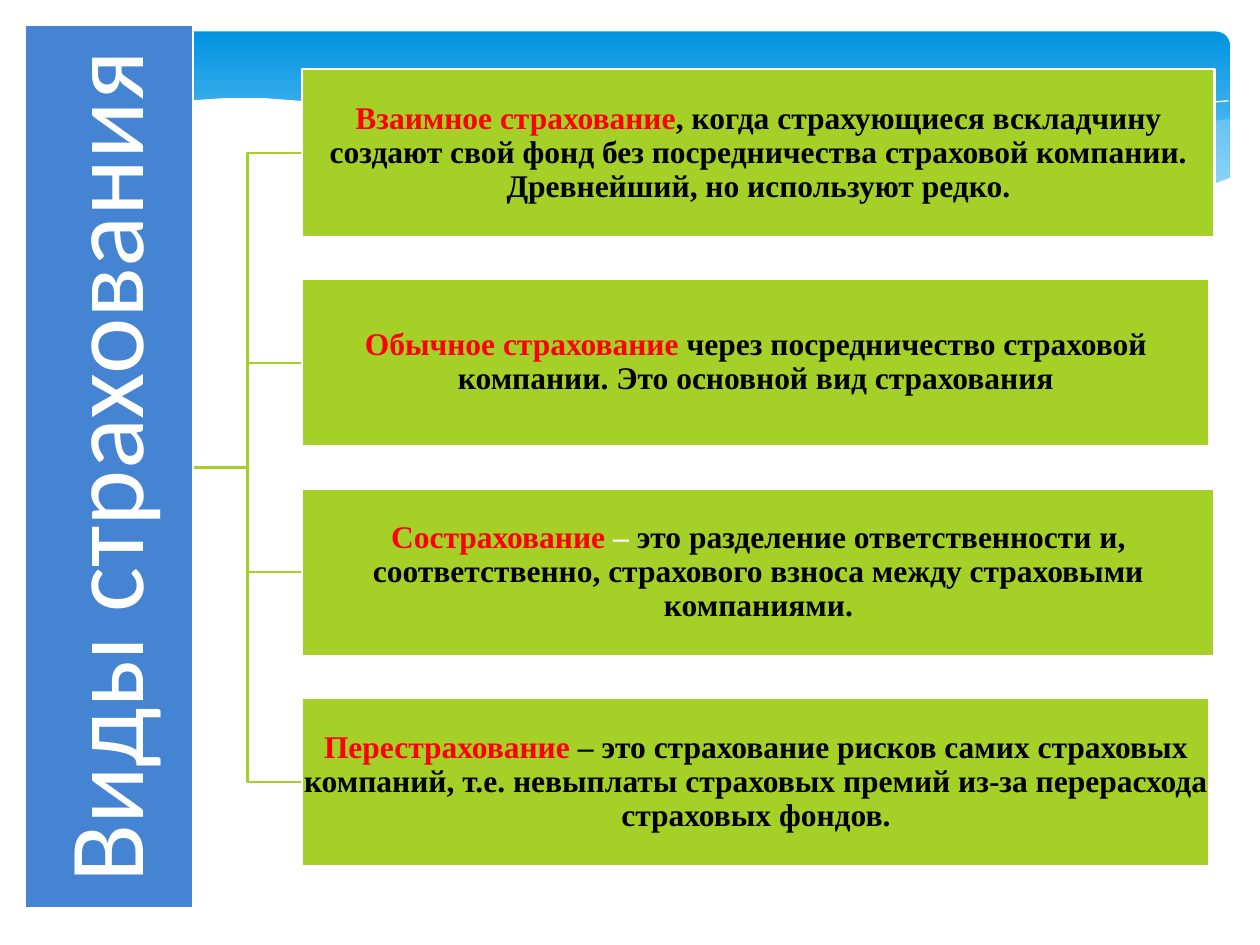
from lxml import etree
from pptx import Presentation
from pptx.dml.color import RGBColor
from pptx.enum.shapes import MSO_CONNECTOR, MSO_SHAPE
from pptx.enum.text import MSO_ANCHOR, PP_ALIGN
from pptx.oxml.ns import qn
from pptx.util import Inches, Pt

RECT = MSO_SHAPE.RECTANGLE
ROUND = MSO_SHAPE.ROUNDED_RECTANGLE
ELBOW = MSO_CONNECTOR.ELBOW
MIDDLE = MSO_ANCHOR.MIDDLE
CENTER = PP_ALIGN.CENTER

COLORS = {
    "sky": "0293E0", "pale": "83D3FE", "mist": "C6E7FC", "white": "FFFFFF",
    "blue": "4584D3", "green": "A5D028", "red": "FF0000", "black": "000000",
}
TITLE = "Виды страхования"
KINDS = [
    (7.24, [("Взаимное страхование", "red"),
            (", когда страхующиеся вскладчину создают свой фонд без посредничества "
             "страховой компании. Древнейший, но используют редко.", "black")]),
    (7.2, [("Обычное страхование ", "red"),
           ("через посредничество страховой компании. "
            "Это основной вид страхования", "black")]),
    (7.24, [("Сострахование ", "red"), ("– ", "white"),
            ("это разделение ответственности и, соответственно, страхового взноса "
             "между страховыми компаниями.", "black")]),
    (7.2, [("Перестрахование", "red"),
           (" – это страхование рисков самих страховых компаний, т.е. невыплаты "
            "страховых премий из-за перерасхода страховых фондов.", "black")]),
]
LEFT, TOP, STEP, HIGH = 2.4, 0.55, 1.664, 1.33
HUB = (1.53, 3.71)

MIST = [(9.76, 0.94), (9.35, 1.01), (8.91, 1.1), (8.32, 1.25), (7.53, 1.43),
        (6.61, 1.6), (7.05, 1.65), (7.57, 1.7), (8.14, 1.72), (8.63, 1.7),
        (9.05, 1.63), (9.42, 1.54), (9.76, 1.41)]
CREST = [(6.13, 1.51), (6.53, 1.41), (6.95, 1.3), (7.48, 1.17), (8.06, 1.04),
         (8.66, 0.93), (9.1, 0.86), (9.51, 0.82), (9.75, 0.8)]
WAVE = [(9.77, 1.41), (9.5, 1.51), (9.2, 1.59), (8.87, 1.66), (8.5, 1.7),
        (8.09, 1.71), (7.61, 1.7), (7.08, 1.65), (6.48, 1.56), (5.79, 1.44),
        (5.03, 1.28), (4.47, 1.14), (3.91, 1.02), (3.4, 0.92), (2.92, 0.85),
        (2.5, 0.81), (2.11, 0.78), (1.77, 0.78), (1.32, 0.81), (0.95, 0.85),
        (0.67, 0.91), (0.46, 0.98), (0.23, 1.07), (0.23, 2.24), (9.77, 2.24)]


def rgb(name):
    """Return the named colour."""
    return RGBColor.from_string(COLORS[name])


def add_band(slide):
    """Add the rounded gradient band."""
    band = slide.shapes.add_shape(
        ROUND, Inches(0.25), Inches(0.25), Inches(9.51), Inches(1.56))
    band.adjustments[0] = 0.071
    band.shadow.inherit = False
    band.line.fill.background()
    band.fill.gradient()
    band.fill.gradient_angle = 270
    for stop, name, place in zip(band.fill.gradient_stops, ("sky", "pale"), (0, 0.9)):
        stop.color.rgb = rgb(name)
        stop.position = place


def add_curve(slide, points, fill=None, line=None, alpha=None):
    """Add a freeform, closed when it is filled."""
    dots = [(Inches(x), Inches(y)) for x, y in points]
    pen = slide.shapes.build_freeform(*dots[0])
    pen.add_line_segments(dots[1:], close=fill is not None)
    curve = pen.convert_to_shape()
    curve.shadow.inherit = False
    if fill:
        curve.fill.solid()
        curve.fill.fore_color.rgb = rgb(fill)
    else:
        curve.fill.background()
    if line:
        curve.line.color.rgb = rgb(line)
        curve.line.width = Pt(0)
    else:
        curve.line.fill.background()
    if alpha:
        tint = curve.fill._xPr.find(".//" + qn("a:srgbClr"))
        etree.SubElement(tint, qn("a:alpha")).set("val", str(alpha * 1000))


def add_link(slide, row):
    """Add the elbow from the title bar to a row."""
    end = TOP + row * STEP + HIGH / 2
    link = slide.shapes.add_connector(
        ELBOW, Inches(HUB[0]), Inches(HUB[1]), Inches(LEFT), Inches(end))
    link.line.color.rgb = rgb("green")
    link.line.width = Pt(1.25)
    etree.SubElement(link._element.spPr, qn("a:effectLst"))


def add_box(slide, left, top, width, fill, runs, font, size, bold, inset):
    """Add a filled box with centred text."""
    box = slide.shapes.add_shape(
        RECT, Inches(left), Inches(top), Inches(width), Inches(HIGH))
    box.shadow.inherit = False
    box.fill.solid()
    box.fill.fore_color.rgb = rgb(fill)
    box.line.color.rgb = rgb("white")
    box.line.width = Pt(1.25)
    frame = box.text_frame
    frame.word_wrap = True
    frame.vertical_anchor = MIDDLE
    frame.margin_left = frame.margin_right = Inches(inset)
    frame.margin_top = frame.margin_bottom = Inches(inset)
    para = frame.paragraphs[0]
    para.alignment = CENTER
    para.line_spacing = 0.9
    for text, color in runs:
        run = para.add_run()
        run.text = text
        run.font.name = font
        run.font.size = Pt(size)
        run.font.bold = bold
        run.font.color.rgb = rgb(color)
    return box


def main():
    """Build the slide and save it."""
    deck = Presentation()
    deck.slide_width, deck.slide_height = Inches(10), Inches(7.5)
    slide = deck.slides.add_slide(deck.slide_layouts[6])
    add_band(slide)
    add_curve(slide, MIST, fill="mist", alpha=29)
    add_curve(slide, CREST, line="white")
    add_curve(slide, WAVE, fill="white")
    for row in reversed(range(len(KINDS))):
        add_link(slide, row)
    bar = add_box(slide, -2.64, 3.04, 7.01, "blue", [(TITLE, "white")],
                  "Calibri", 61, False, 0.04)
    bar.rotation = 270
    for row, (width, runs) in enumerate(KINDS):
        add_box(slide, LEFT, TOP + row * STEP, width, "green", runs,
                "Times New Roman", 18, True, 0.01)
    deck.save("out.pptx")


if __name__ == "__main__":
    main()
